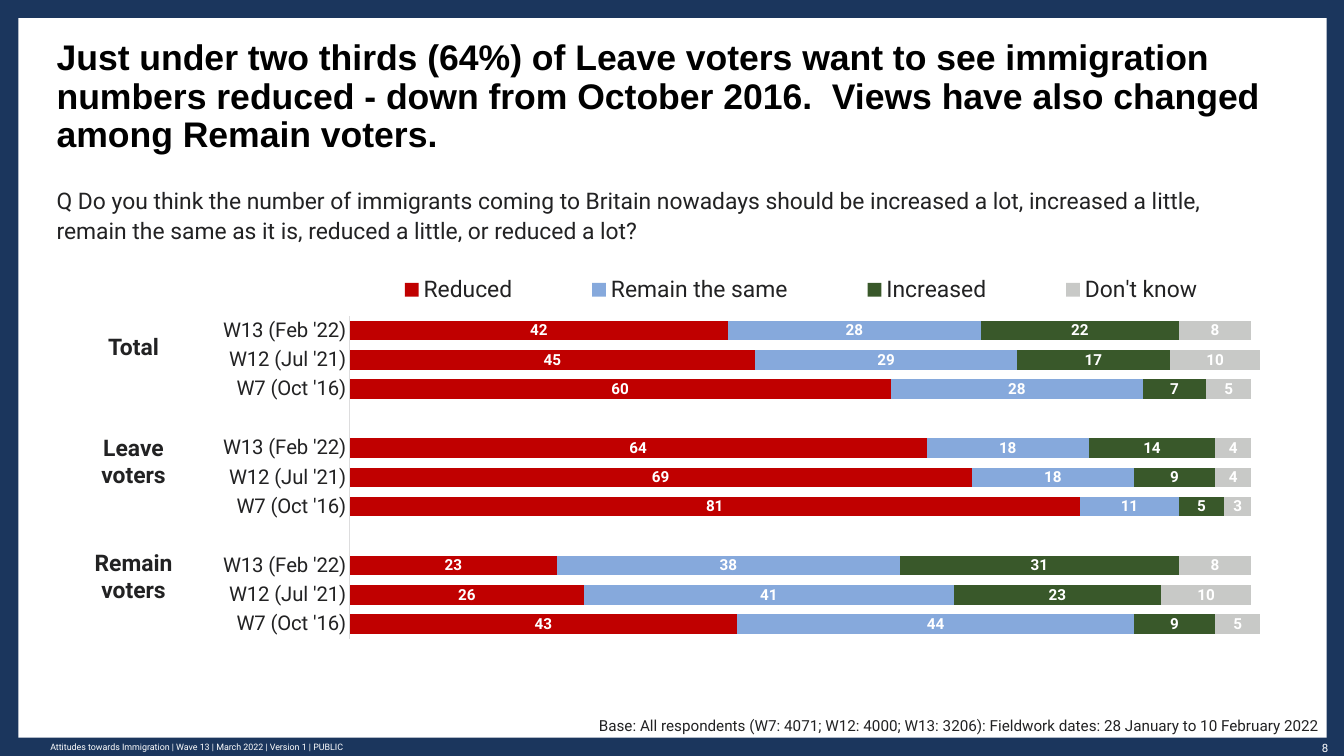
import dataclasses

import pptx
import pptx.chart.data
import pptx.dml.color
import pptx.enum.chart
import pptx.enum.shapes
import pptx.enum.text
import pptx.oxml
import pptx.oxml.ns
import pptx.util

Pt = pptx.util.Pt
ALIGN = pptx.enum.text.PP_ALIGN
ANCHOR = pptx.enum.text.MSO_ANCHOR


@dataclasses.dataclass(frozen=True)
class Theme:
    heading_font: str = "Arial"
    body_font: str = "Roboto"
    navy: str = "1B365D"
    white: str = "FFFFFF"
    black: str = "000000"
    ink: str = "222223"
    axis: str = "DDDDDE"
    series: tuple = ("C00000", "86A9DC", "39582A", "C8C9C7")
    title_size: float = 28
    body_size: float = 18
    category_size: float = 16
    note_size: float = 12
    number_size: float = 9
    footer_size: float = 7


def color(code):
    return pptx.dml.color.RGBColor.from_string(code)


class SlideBuilder:
    """Holds the theme and the current slide."""

    def __init__(self, slide, theme):
        self.slide = slide
        self.theme = theme

    def style(self, font, size, code, bold=False, name=None):
        font.name = name or self.theme.body_font
        font.size = Pt(size)
        font.bold = bold
        font.color.rgb = color(code)

    def background(self, code):
        fill = self.slide.background.fill
        fill.solid()
        fill.fore_color.rgb = color(code)

    def panel(self, box, code):
        shape = self.slide.shapes.add_shape(
            pptx.enum.shapes.MSO_SHAPE.RECTANGLE, *map(Pt, box))
        shape.shadow.inherit = False
        shape.fill.solid()
        shape.fill.fore_color.rgb = color(code)
        shape.line.fill.background()

    def text(self, box, words, size, code, bold=False, name=None,
             align=ALIGN.LEFT, anchor=ANCHOR.TOP, spacing=1.0, wrap=True):
        frame = self.slide.shapes.add_textbox(*map(Pt, box)).text_frame
        frame.margin_left = frame.margin_right = Pt(0)
        frame.margin_top = frame.margin_bottom = Pt(0)
        frame.word_wrap = wrap
        frame.vertical_anchor = anchor
        paragraph = frame.paragraphs[0]
        paragraph.alignment = align
        paragraph.line_spacing = spacing
        run = paragraph.add_run()
        run.text = words
        self.style(run.font, size, code, bold, name)

    def label_column(self, box, labels):
        table = self.slide.shapes.add_table(len(labels), 1, *map(Pt, box)).table
        table.first_row = False
        table.horz_banding = False
        for row, label in enumerate(labels):
            cell = table.cell(row, 0)
            cell.fill.background()
            cell.vertical_anchor = ANCHOR.MIDDLE
            paragraph = cell.text_frame.paragraphs[0]
            paragraph.alignment = ALIGN.CENTER
            run = paragraph.add_run()
            run.text = label
            self.style(run.font, self.theme.body_size, self.theme.ink, bold=True)

    def place(self, element, position, layout, target=""):
        """Give a chart part a fixed place, as shares of the chart."""
        for old in element.xpath("c:layout"):
            element.remove(old)
        modes = "".join(f'<c:{side}Mode val="edge"/>' for side in "xy")
        sizes = "".join(f'<c:{side} val="{share}"/>'
                        for side, share in zip("xywh", layout))
        element.insert(position, pptx.oxml.parse_xml(
            f'<c:layout {pptx.oxml.ns.nsdecls("c")}><c:manualLayout>'
            f'{target}{modes}{sizes}</c:manualLayout></c:layout>'))

    def stacked_bars(self, box, categories, series_values, maximum):
        theme = self.theme
        data = pptx.chart.data.CategoryChartData(number_format="0")
        data.categories = categories
        for name, values in series_values.items():
            data.add_series(name, values)
        chart = self.slide.shapes.add_chart(
            pptx.enum.chart.XL_CHART_TYPE.BAR_STACKED, *map(Pt, box), data).chart
        chart.has_title = False
        self.style(chart.font, 10, theme.ink)

        # Bars and their value labels
        plot = chart.plots[0]
        plot.gap_width = 50
        plot.overlap = 100
        plot.vary_by_categories = False
        for series, code in zip(plot.series, theme.series):
            series.format.fill.solid()
            series.format.fill.fore_color.rgb = color(code)
            labels = series.data_labels
            labels.show_value = True
            self.style(labels.font, theme.note_size, theme.white, bold=True)

        # Axes
        category_axis = chart.category_axis
        category_axis.reverse_order = True
        category_axis.has_major_gridlines = False
        category_axis.major_tick_mark = pptx.enum.chart.XL_TICK_MARK.NONE
        category_axis.format.line.color.rgb = color(theme.axis)
        category_axis.format.line.width = Pt(0.75)
        self.style(category_axis.tick_labels.font, theme.category_size, theme.ink)
        value_axis = chart.value_axis
        value_axis.minimum_scale = 0
        value_axis.maximum_scale = maximum
        value_axis.has_major_gridlines = False
        value_axis.visible = False

        # Legend above the bars
        chart.has_legend = True
        chart.legend.position = pptx.enum.chart.XL_LEGEND_POSITION.BOTTOM
        chart.legend.include_in_layout = False
        self.style(chart.legend.font, theme.body_size, theme.ink)
        self.place(chart.element.xpath(".//c:legend")[0], 1,
                   (0.22, 0.04, 0.77, 0.08))
        self.place(chart.element.xpath(".//c:plotArea")[0], 0,
                   (0.234, 0.143, 0.752, 0.784),
                   '<c:layoutTarget val="inner"/>')


def main():
    theme = Theme()
    presentation = pptx.Presentation()
    presentation.slide_width = Pt(1058.4)
    presentation.slide_height = Pt(595.44)
    slide = presentation.slides.add_slide(presentation.slide_layouts[6])
    builder = SlideBuilder(slide, theme)

    # Frame and footer
    builder.background(theme.navy)
    builder.panel((14.4, 14.4, 1030.3, 566.6), theme.white)
    builder.text((1012.3, 582.5, 33.8, 12.2), "8", theme.number_size,
                 theme.white, align=ALIGN.RIGHT, spacing=1.1)
    builder.text((39.6, 581, 385.2, 14.4),
                 "Attitudes towards Immigration | Wave 13 | March 2022 | "
                 "Version 1 | PUBLIC",
                 theme.footer_size, theme.white, anchor=ANCHOR.MIDDLE, wrap=False)

    # Question, base and title
    builder.text((44.6, 144.7, 921.6, 46),
                 "Q Do you think the number of immigrants coming to Britain "
                 "nowadays should be increased a lot, increased a little, remain "
                 "the same as it is, reduced a little, or reduced a lot?",
                 theme.body_size, theme.ink, spacing=1.1)
    builder.text((103.7, 564.5, 935.3, 14.4),
                 "Base: All respondents (W7: 4071; W12: 4000; W13: 3206): "
                 "Fieldwork dates: 28 January to 10 February 2022",
                 theme.note_size, theme.ink, align=ALIGN.RIGHT)
    builder.text((44.6, 61.2, 982.8, 61.2),
                 "Just under two thirds (64%) of Leave voters want to see "
                 "immigration numbers reduced - down from October 2016.  Views "
                 "have also changed among Remain voters.",
                 theme.title_size, theme.black, bold=True,
                 name=theme.heading_font, anchor=ANCHOR.BOTTOM, spacing=0.9)

    # Chart: three waves per voter group, with an empty row between groups
    waves = ["W13 (Feb '22)", "W12 (Jul '21)", "W7 (Oct '16)"]
    builder.stacked_bars(
        (51.1, 202.3, 958.3, 324.7),
        (waves + [""]) * 2 + waves,
        {
            "Reduced": (42, 45, 60, None, 64, 69, 81, None, 23, 26, 43),
            "Remain the same": (28, 29, 28, None, 18, 18, 11, None, 38, 41, 44),
            "Increased": (22, 17, 7, None, 14, 9, 5, None, 31, 23, 9),
            "Don't know": (8, 10, 5, None, 4, 4, 3, None, 8, 10, 5),
        },
        maximum=101.5)

    # Voter groups
    builder.label_column((64.1, 228.2, 82.1, 272.2),
                         ["Total", "Leave voters", "Remain voters"])
    presentation.save("out.pptx")


if __name__ == "__main__":
    main()
